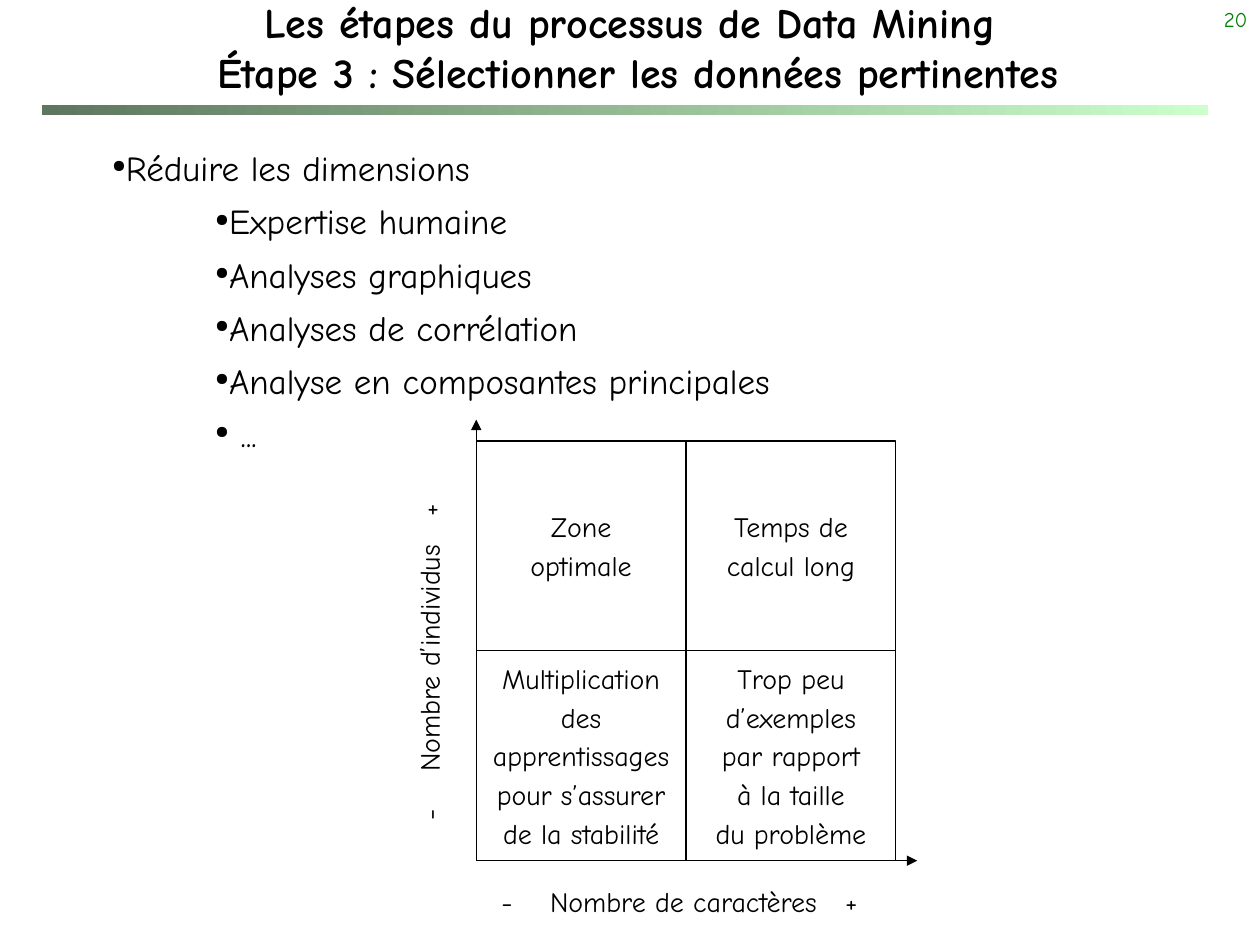
from typing import NamedTuple

from lxml import etree
from pptx import Presentation, util as u
from pptx.dml.color import RGBColor
from pptx.enum import shapes, text
from pptx.oxml.ns import qn

COLORS = {
    "ink": "000000",
    "paper": "FFFFFF",
    "number": "008000",
    "band_start": "5E765E",
    "band_end": "CCFFCC",
}
FONT = "Comic Neue"
CELL = 4.23
GRID_LEFT, GRID_TOP = 9.6, 8.89
GRID_BOTTOM = GRID_TOP + 2 * CELL
AXIS_LENGTH = 2 * CELL + 0.43
ALIGN = text.PP_ALIGN


class Quadrant(NamedTuple):
    column: int
    row: int
    lines: list[str]


class Axis(NamedTuple):
    end_x: float
    end_y: float
    label: str
    box: tuple[float, float, float, float]
    rotation: int
    tabs: tuple[float, float]


class Bullet(NamedTuple):
    label: str
    indent: float


QUADRANTS = [
    Quadrant(0, 0, ["Zone", "optimale"]),
    Quadrant(1, 0, ["Temps de", "calcul long"]),
    Quadrant(0, 1, ["Multiplication", "des", "apprentissages", "pour s’assurer", "de la stabilité"]),
    Quadrant(1, 1, ["Trop peu", "d’exemples", "par rapport", "à la taille", "du problème"]),
]
AXES = [
    Axis(GRID_LEFT + AXIS_LENGTH, GRID_BOTTOM, "-\tNombre de caractères\t+",
         (9.86, 17.7, 8.2, 0.94), 0, (0.98, 6.93)),
    Axis(GRID_LEFT, GRID_BOTTOM - AXIS_LENGTH, "-\tNombre d’individus\t+",
         (5.03, 12.7, 7.24, 0.94), 270, (0.98, 6.13)),
]
BULLETS = [Bullet("Réduire les dimensions", 0)] + [
    Bullet(label, 2.08)
    for label in ("Expertise humaine", "Analyses graphiques", "Analyses de corrélation",
                  "Analyse en composantes principales", " ...")
]


def color(name: str) -> RGBColor:
    return RGBColor.from_string(COLORS[name])


def write(frame, lines: list[str], *, size: float, align, ink: str = "ink",
          bold: bool = False, before: float = 0, spacing: float = 1.0,
          anchor=text.MSO_ANCHOR.TOP, wrap: bool = True) -> list:
    frame.word_wrap = wrap
    frame.auto_size = text.MSO_AUTO_SIZE.NONE
    frame.vertical_anchor = anchor
    frame.text = "\n".join(lines)
    for para in frame.paragraphs:
        para.alignment = align
        para.space_before = u.Pt(before)
        para.line_spacing = spacing
        for span in para.runs:
            span.font.name = FONT
            span.font.size = u.Pt(size)
            span.font.bold = bold
            span.font.color.rgb = color(ink)
    return list(frame.paragraphs)


def add_box(page, left: float, top: float, width: float, height: float):
    return page.shapes.add_textbox(u.Cm(left), u.Cm(top), u.Cm(width), u.Cm(height))


def add_rectangle(page, left: float, top: float, width: float, height: float):
    shape = page.shapes.add_shape(shapes.MSO_SHAPE.RECTANGLE,
                                  u.Cm(left), u.Cm(top), u.Cm(width), u.Cm(height))
    shape.shadow.inherit = False
    return shape


def add_band(page) -> None:
    band = add_rectangle(page, 0.85, 2.12, 23.5, 0.2)
    band.line.fill.background()
    band.fill.gradient()
    band.fill.gradient_angle = 0
    for stop, name in zip(band.fill.gradient_stops, ("band_start", "band_end")):
        stop.color.rgb = color(name)


def add_title(page) -> None:
    title = page.shapes.title
    title.left, title.top, title.width, title.height = u.Cm(0), u.Cm(0.2), u.Cm(25.4), u.Cm(1.48)
    write(title.text_frame,
          ["Les étapes du processus de Data Mining\v Étape 3 : Sélectionner les données pertinentes"],
          size=24, bold=True, align=ALIGN.CENTER, anchor=text.MSO_ANCHOR.MIDDLE)


def add_bullets(page, bullets: list[Bullet]) -> None:
    box = add_box(page, 1.48, 2.75, 21.59, 8.04)
    paragraphs = write(box.text_frame, [bullet.label for bullet in bullets],
                       size=20, align=ALIGN.JUSTIFY, before=4, spacing=1.1)
    for para, bullet in zip(paragraphs, bullets):
        props = para._p.get_or_add_pPr()
        props.set("marL", str(u.Cm(bullet.indent)))
        props.set("indent", str(u.Cm(0.53)))
        etree.SubElement(props, qn("a:buSzPct"), val="50000")
        etree.SubElement(props, qn("a:buChar"), char="●")


def add_quadrant(page, quadrant: Quadrant) -> None:
    cell = add_rectangle(page, GRID_LEFT + quadrant.column * CELL,
                         GRID_TOP + quadrant.row * CELL, CELL, CELL)
    cell.fill.solid()
    cell.fill.fore_color.rgb = color("paper")
    cell.line.color.rgb = color("ink")
    cell.line.width = u.Pt(0.75)
    write(cell.text_frame, quadrant.lines, size=16, align=ALIGN.CENTER, before=3,
          anchor=text.MSO_ANCHOR.MIDDLE, wrap=False)


def add_axis(page, axis: Axis) -> None:
    arrow = page.shapes.add_connector(shapes.MSO_CONNECTOR.STRAIGHT,
                                      u.Cm(GRID_LEFT), u.Cm(GRID_BOTTOM),
                                      u.Cm(axis.end_x), u.Cm(axis.end_y))
    arrow.line.color.rgb = color("ink")
    arrow.line.width = u.Pt(0.75)
    etree.SubElement(arrow.line._get_or_add_ln(), qn("a:tailEnd"), type="triangle")
    etree.SubElement(arrow._element.spPr, qn("a:effectLst"))

    box = add_box(page, *axis.box)
    box.rotation = axis.rotation
    para = write(box.text_frame, [axis.label], size=16, align=ALIGN.LEFT, before=3)[0]
    stops = etree.SubElement(para._p.get_or_add_pPr(), qn("a:tabLst"))
    for position in axis.tabs:
        etree.SubElement(stops, qn("a:tab"), pos=str(u.Cm(position)), algn="l")


def main() -> None:
    deck = Presentation()
    deck.slide_width, deck.slide_height = u.Cm(25.4), u.Cm(19.05)
    page = deck.slides.add_slide(deck.slide_layouts[5])
    add_band(page)
    number = add_box(page, 20.12, 0, 5.28, 1.27)
    write(number.text_frame, ["20"], size=12, align=ALIGN.RIGHT, ink="number")
    add_title(page)
    add_bullets(page, BULLETS)
    for quadrant in QUADRANTS:
        add_quadrant(page, quadrant)
    for axis in AXES:
        add_axis(page, axis)
    deck.save("out.pptx")


if __name__ == "__main__":
    main()
